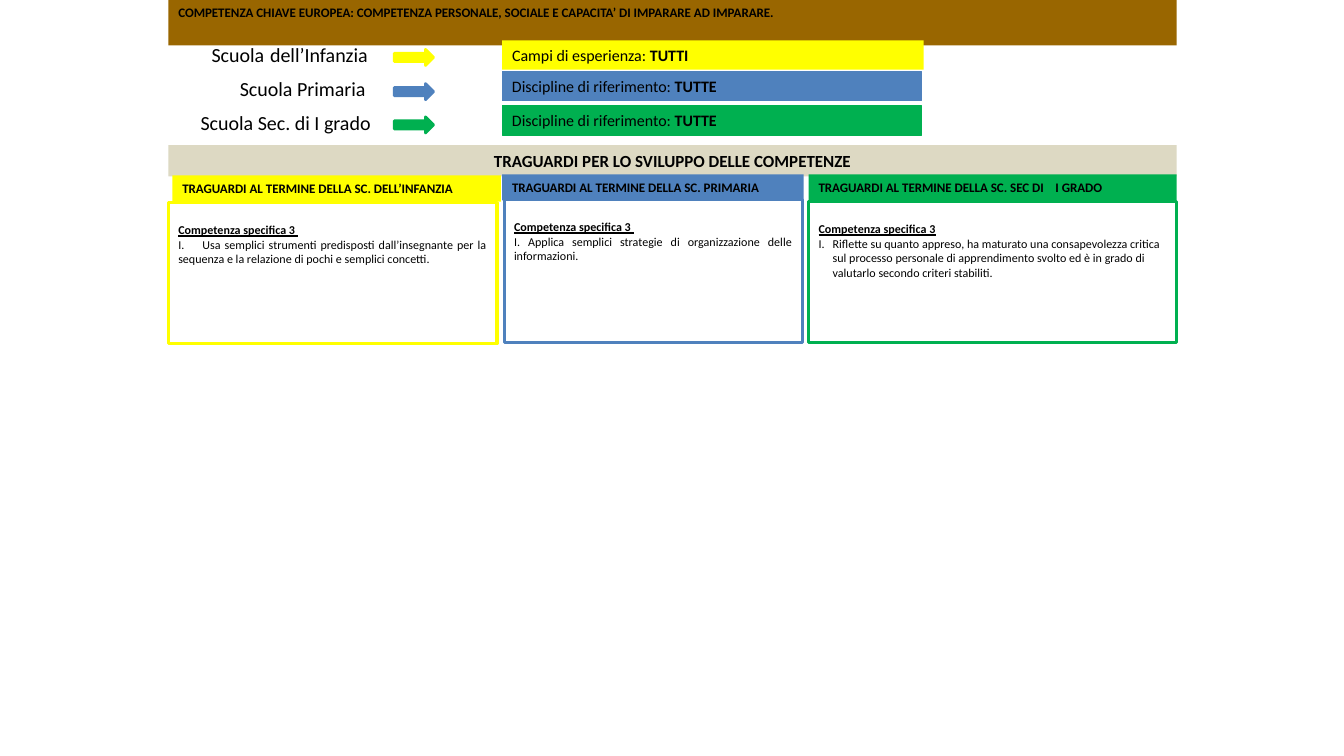
from pptx import Presentation
from pptx.dml.color import RGBColor
from pptx.enum.shapes import MSO_SHAPE
from pptx.enum.text import MSO_ANCHOR, PP_ALIGN
from pptx.oxml.ns import qn
from pptx.util import Inches, Pt
from lxml import etree

RECT, ARROW = MSO_SHAPE.RECTANGLE, MSO_SHAPE.RIGHT_ARROW
LEFT, CENTER, JUSTIFY = PP_ALIGN.LEFT, PP_ALIGN.CENTER, PP_ALIGN.JUSTIFY
TOP = MSO_ANCHOR.TOP

BLACK = RGBColor(0x00, 0x00, 0x00)
BROWN = RGBColor(0x99, 0x66, 0x00)
BEIGE = RGBColor(0xDD, 0xD9, 0xC3)
YELLOW = RGBColor(0xFF, 0xFF, 0x00)
BLUE = RGBColor(0x4F, 0x81, 0xBD)
GREEN = RGBColor(0x00, 0xB0, 0x50)

PAGE_X, PAGE_W = 1.67, 10
ARROW_X, FIELD_X = 3.91, 4.98
HEADING = {"size": Pt(9.3), "bold": True}
TITLE = {"size": Pt(12.1), "bold": True}
LABEL = {"size": Pt(14.3)}
LABEL_GAP = {"size": Pt(17.9)}
FIELD = {"size": Pt(11.4)}
BODY = {"size": Pt(8.6)}
BODY_HEAD = {**BODY, "bold": True, "underline": True}

SCHOOLS = [
    (YELLOW, (2, 0.32, 2.2, 0.4), [("Scuola", LABEL), (" ", LABEL_GAP), ("dell’Infanzia", LABEL)],
     0.49, (0.4, 4.18), 0, "Campi di esperienza: ", "TUTTI"),
    (BLUE, (2.28, 0.71, 1.52, 0.34), [("Scuola Primaria", LABEL)],
     0.83, (0.71, 4.16), 0.75, "Discipline di riferimento: ", "TUTTE"),
    (GREEN, (1.89, 1.05, 2.32, 0.34), [("Scuola Sec. di I grado", LABEL)],
     1.16, (1.05, 4.16), 0.75, "Discipline di riferimento: ", "TUTTE"),
]

GOALS = [
    (YELLOW, (1.71, 1.74, 3.26, 0.26), "TRAGUARDI AL TERMINE DELLA SC. DELL’INFANZIA", None,
     (1.67, 2.01, 3.26, 1.4), "Competenza specifica 3 ",
     "I.\tUsa semplici strumenti predisposti dall’insegnante per la sequenza e la relazione "
     "di pochi e semplici concetti.", JUSTIFY, 0.24, False),
    (BLUE, (4.98, 1.73, 2.99, 0.26), "TRAGUARDI AL TERMINE DELLA SC. PRIMARIA", None,
     (5, 1.98, 2.96, 1.42), "Competenza specifica 3 ",
     "I. Applica semplici strategie di organizzazione delle informazioni.", JUSTIFY, None, False),
    (GREEN, (8.02, 1.73, 3.65, 0.26), "TRAGUARDI AL TERMINE DELLA SC. SEC DI\tI GRADO", 2.35,
     (8.02, 2, 3.65, 1.4), "Competenza specifica 3",
     "Riflette su quanto appreso, ha maturato una consapevolezza critica sul processo personale "
     "di apprendimento svolto ed è in grado di valutarlo secondo criteri stabiliti.",
     LEFT, None, True),
]


def add_box(s, box, kind=RECT, fill=None, line=None, width=0):
    sp = s.shapes.add_shape(kind, *map(Inches, box))
    sp.shadow.inherit = False
    if fill is None:
        sp.fill.background()
    else:
        sp.fill.solid()
        sp.fill.fore_color.rgb = fill
    if width:
        sp.line.color.rgb = line
        sp.line.width = Pt(width)
    else:
        sp.line.fill.background()
    return sp


def prepare_frame(sp, top=0.05):
    tf = sp.text_frame
    layout = {"word_wrap": True, "vertical_anchor": TOP, "margin_left": Inches(0.1),
              "margin_right": Inches(0.1), "margin_top": Inches(top), "margin_bottom": Inches(0.05)}
    for name, value in layout.items():
        setattr(tf, name, value)
    return tf


def write(p, runs, align=LEFT, tab=None):
    p.alignment = align
    for text, fmt in runs:
        r = p.add_run()
        r.text = text
        r.font.color.rgb = BLACK
        for name, value in {"name": "Calibri", **fmt}.items():
            setattr(r.font, name, value)
    if tab:
        tabs = etree.SubElement(p._p.get_or_add_pPr(), qn("a:tabLst"))
        etree.SubElement(tabs, qn("a:tab"), pos=str(Inches(tab)), algn="l")


def number_roman(p, indent):
    pPr = p._p.get_or_add_pPr()
    pPr.set("marL", str(Inches(indent)))
    pPr.set("indent", str(-Inches(indent)))
    etree.SubElement(pPr, qn("a:buAutoNum"), type="romanUcPeriod")


def add_band(s, box, fill, text, fmt, align=LEFT, tab=None):
    sp = add_box(s, box, fill=fill)
    write(prepare_frame(sp).paragraphs[0], [(text, fmt)], align, tab)


def add_school(s, color, label_box, label, arrow_y, field_at, width, lead, scope):
    sp = s.shapes.add_textbox(*map(Inches, label_box))
    write(prepare_frame(sp).paragraphs[0], label)
    add_box(s, (ARROW_X, arrow_y, 0.39, 0.16), ARROW, color, color, 2)
    field_y, field_w = field_at
    sp = add_box(s, (FIELD_X, field_y, field_w, 0.29), fill=color, line=color, width=width)
    write(prepare_frame(sp).paragraphs[0], [(lead, FIELD), (scope, {**FIELD, "bold": True})])


def add_goal(s, color, head_box, heading, head_tab, box, skill, goal, align, tab, numbered):
    add_band(s, head_box, color, heading, HEADING, tab=head_tab)
    tf = prepare_frame(add_box(s, box, line=color, width=2.25), top=0.2)
    write(tf.paragraphs[0], [(skill, BODY_HEAD)], align)
    p = tf.add_paragraph()
    write(p, [(goal, BODY)], align, tab)
    if numbered:
        number_roman(p, 0.14)


def main():
    prs = Presentation()
    prs.slide_width, prs.slide_height = Inches(13.33), Inches(7.5)
    s = prs.slides.add_slide(prs.slide_layouts[6])
    add_band(s, (PAGE_X, 0, PAGE_W, 0.45), BROWN,
             "COMPETENZA CHIAVE EUROPEA: COMPETENZA PERSONALE, SOCIALE E CAPACITA’ "
             "DI IMPARARE AD IMPARARE.", HEADING)
    for school in SCHOOLS:
        add_school(s, *school)
    add_band(s, (PAGE_X, 1.44, PAGE_W, 0.31), BEIGE,
             "TRAGUARDI PER LO SVILUPPO DELLE COMPETENZE", TITLE, CENTER)
    for goal in GOALS:
        add_goal(s, *goal)
    prs.save("out.pptx")


if __name__ == "__main__":
    main()
